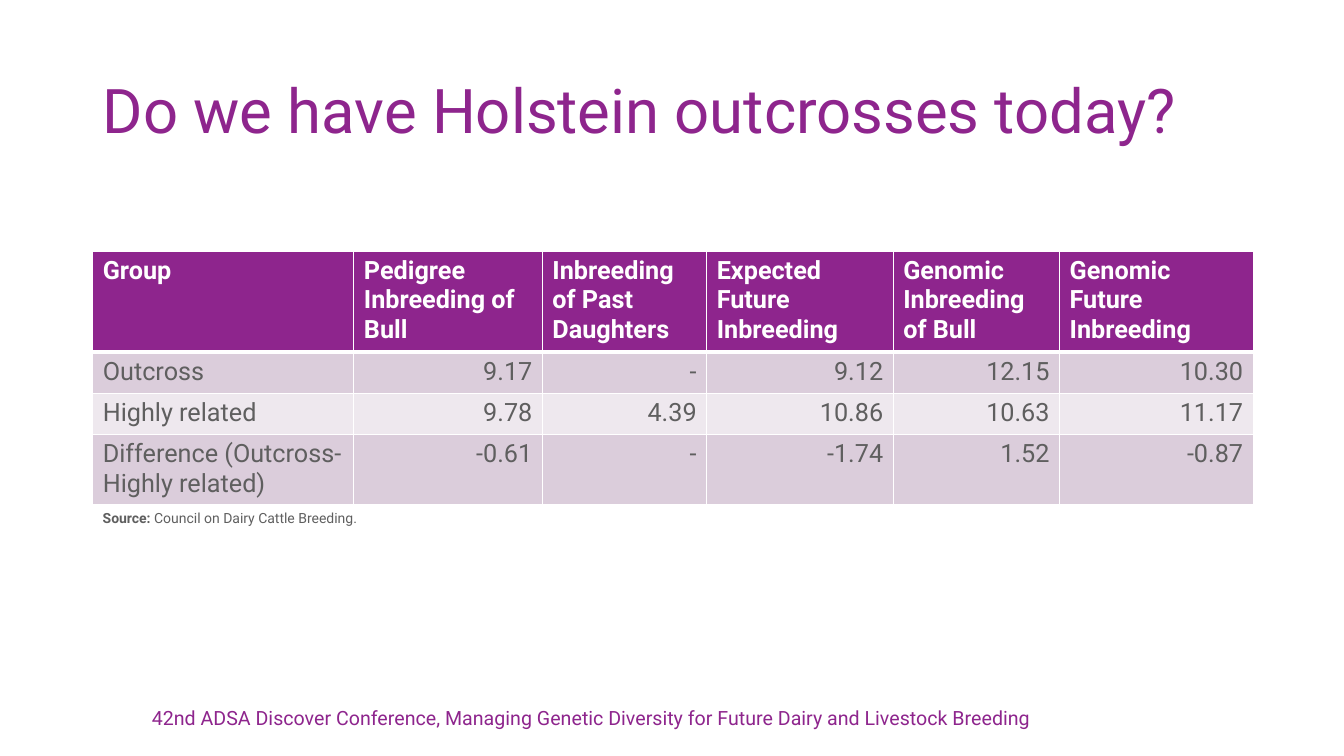
from lxml import etree
from pptx import Presentation
from pptx.dml.color import RGBColor
from pptx.enum.text import MSO_ANCHOR, PP_ALIGN
from pptx.oxml.ns import qn
from pptx.util import Emu, Pt

LEFT, CENTER, RIGHT = PP_ALIGN.LEFT, PP_ALIGN.CENTER, PP_ALIGN.RIGHT
TOP, MIDDLE = MSO_ANCHOR.TOP, MSO_ANCHOR.MIDDLE

EMU_PER_PX = 9144
FONT = "Roboto"
PURPLE, GRAY, WHITE = "8E258D", "5F5F5F", "FFFFFF"
BAND_FILLS = ("DBCDDB", "EEE8EE")

COLUMN_WIDTHS = (259, 187, 163, 185, 165, 192)
ROW_HEIGHTS = (98, 41, 41, 69)
INBREEDING_ROWS = (
    ("Group", "Pedigree Inbreeding of Bull", "Inbreeding of Past Daughters",
     "Expected Future Inbreeding", "Genomic Inbreeding of Bull",
     "Genomic Future Inbreeding"),
    ("Outcross", "9.17", "-", "9.12", "12.15", "10.30"),
    ("Highly related", "9.78", "4.39", "10.86", "10.63", "11.17"),
    ("Difference (Outcross-Highly related)",
     "-0.61", "-", "-1.74", "1.52", "-0.87"),
)


def px(length):
    return Emu(length * EMU_PER_PX)


def color(hex_string):
    return RGBColor.from_string(hex_string)


def add_run(paragraph, text, size, text_color, bold=False):
    run = paragraph.add_run()
    run.text = text
    run.font.name = FONT
    run.font.size = Pt(size)
    run.font.bold = bold
    run.font.color.rgb = color(text_color)


def add_text(slide, box, runs, size, text_color, align=LEFT, anchor=TOP,
             wrap=True, line_spacing=None):
    """Add a one-paragraph text box; runs are (text, bold) pairs."""
    shape = slide.shapes.add_textbox(*map(px, box))
    frame = shape.text_frame
    frame.word_wrap = wrap
    frame.vertical_anchor = anchor
    paragraph = frame.paragraphs[0]
    paragraph.alignment = align
    paragraph.line_spacing = line_spacing
    for text, bold in runs:
        add_run(paragraph, text, size, text_color, bold)


def set_borders(cell, widths):
    """Draw white borders; widths are points for left, right, top, bottom."""
    properties = cell._tc.get_or_add_tcPr()
    for position, (side, width) in enumerate(zip("LRTB", widths)):
        line = etree.Element(qn(f"a:ln{side}"), w=str(Pt(width)))
        fill = etree.SubElement(line, qn("a:solidFill"))
        etree.SubElement(fill, qn("a:srgbClr"), val=WHITE)
        properties.insert(position, line)


def fill_cell(cell, text, row, column):
    header = row == 0
    cell.fill.solid()
    cell.fill.fore_color.rgb = color(
        PURPLE if header else BAND_FILLS[(row - 1) % 2])
    set_borders(cell, (1, 1, 3 if row == 1 else 1, 3 if header else 1))
    paragraph = cell.text_frame.paragraphs[0]
    paragraph.alignment = LEFT if header or column == 0 else RIGHT
    add_run(paragraph, text, 18, WHITE if header else GRAY, header)


def add_inbreeding_table(slide, left, top):
    frame = slide.shapes.add_table(
        len(ROW_HEIGHTS), len(COLUMN_WIDTHS), px(left), px(top),
        px(sum(COLUMN_WIDTHS)), px(sum(ROW_HEIGHTS)))
    table = frame.table
    for column, width in zip(table.columns, COLUMN_WIDTHS):
        column.width = px(width)
    for row, height in zip(table.rows, ROW_HEIGHTS):
        row.height = px(height)
    for row, texts in enumerate(INBREEDING_ROWS):
        for column, text in enumerate(texts):
            fill_cell(table.cell(row, column), text, row, column)


def main():
    presentation = Presentation()
    presentation.slide_width = px(1333)
    presentation.slide_height = px(750)
    slide = presentation.slides.add_slide(presentation.slide_layouts[6])

    add_text(slide, (92, 40, 1150, 145),
             [("Do we have Holstein outcrosses today?", False)],
             44, PURPLE, anchor=MIDDLE, line_spacing=0.9)
    add_text(slide, (92, 695, 989, 40),
             [("42nd ADSA Discover Conference, Managing Genetic Diversity "
               "for Future Dairy and Livestock Breeding", False)],
             14, PURPLE, align=CENTER)
    add_inbreeding_table(slide, 92, 249)
    add_text(slide, (92, 501, 278, 27),
             [("Source:", True), (" Council on Dairy Cattle Breeding.", False)],
             10, GRAY, wrap=False)

    presentation.save("out.pptx")


if __name__ == "__main__":
    main()
